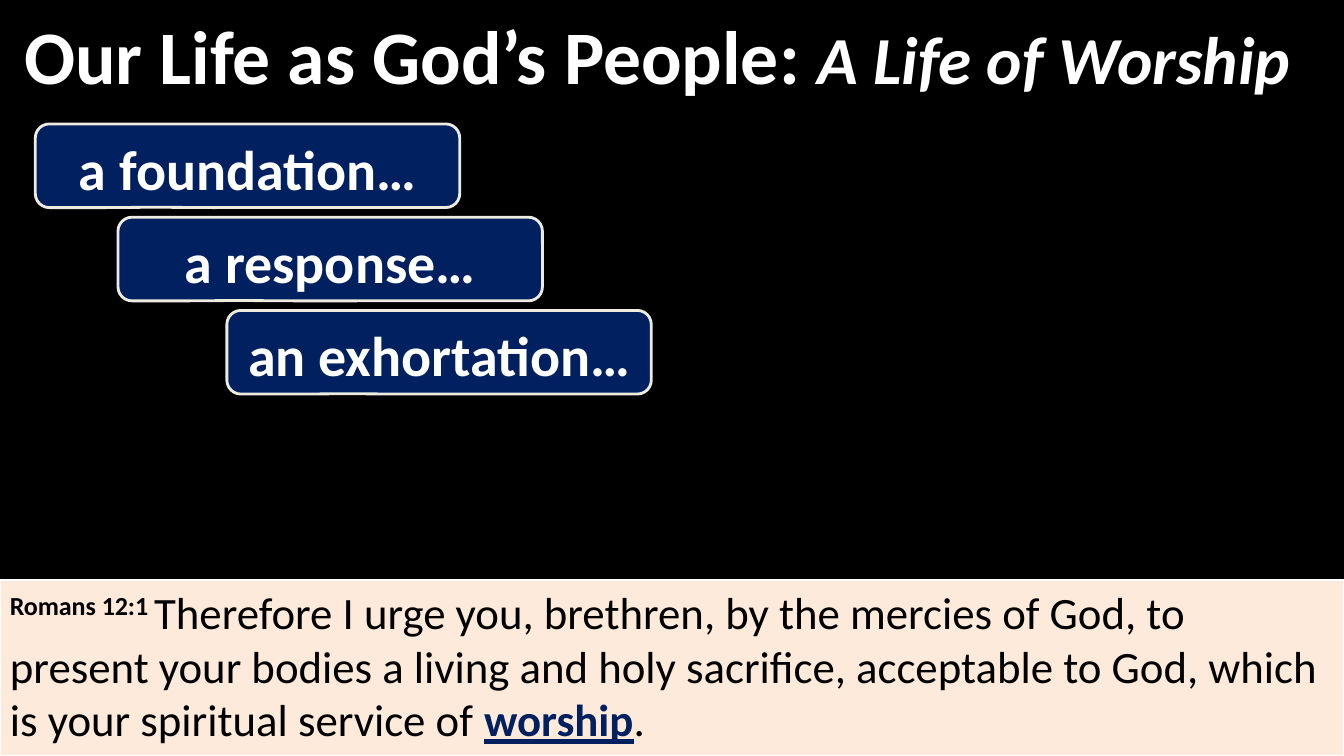
from lxml import etree
from pptx import Presentation
from pptx.dml.color import RGBColor
from pptx.enum.shapes import MSO_SHAPE as SHAPE
from pptx.enum.text import MSO_ANCHOR as ANCHOR, PP_ALIGN as ALIGN
from pptx.oxml.ns import qn
from pptx.util import Inches, Pt

BLACK = RGBColor(0x00, 0x00, 0x00)
WHITE = RGBColor(0xFF, 0xFF, 0xFF)
NAVY = RGBColor(0x00, 0x20, 0x60)
PEACH = RGBColor(0xFD, 0xEA, 0xDA)
CREAM = RGBColor(0xEE, 0xEC, 0xE1)

WIDTH, HEIGHT = 13.33, 7.5
TITLE_H, VERSE_H = 1.07, 1.75
STEP_W, STEP_H, STEP_PITCH = 4.21, 0.83, 0.925


def add_box(s, kind, box, fill, line=None, line_width=0, anchor=ANCHOR.TOP):
    sp = s.shapes.add_shape(kind, *[Inches(v) for v in box])
    sp.shadow.inherit = False
    sp.fill.solid()
    sp.fill.fore_color.rgb = fill
    if line is None:
        sp.line.fill.background()
    else:
        sp.line.color.rgb = line
        sp.line.width = Pt(line_width)
    tf = sp.text_frame
    tf.word_wrap = True
    tf.vertical_anchor = anchor
    tf.paragraphs[0].alignment = ALIGN.LEFT
    return sp


def add_run(p, text, size, color, bold=False, italic=False, underline=False,
            baseline=0):
    r = p.add_run()
    r.text = text
    f = r.font
    f.name, f.size, f.color.rgb = "Calibri", Pt(size), color
    f.bold, f.italic, f.underline = bold, italic, underline
    if baseline:
        r._r.get_or_add_rPr().set("baseline", str(baseline * 1000))


def set_opacity(sp, percent):
    color = sp.fill._xPr.find(qn("a:solidFill"))[0]
    etree.SubElement(color, qn("a:alpha")).set("val", str(percent * 1000))


def add_verse(s, box):
    sp = add_box(s, SHAPE.RECTANGLE, box, PEACH, WHITE, 1.5)
    sp.text_frame.margin_right = Inches(0.2)
    p = sp.text_frame.paragraphs[0]
    add_run(p, "Romans 12:1 ", 32, BLACK, bold=True, baseline=30)
    add_run(p, "Therefore I urge you, brethren, by the mercies of God, to "
               "present your bodies a living and holy sacrifice, acceptable "
               "to God, which is your spiritual service of ", 32, BLACK)
    add_run(p, "worship", 32, NAVY, bold=True, underline=True)
    add_run(p, ".", 32, BLACK)


def add_title(s, box):
    sp = add_box(s, SHAPE.RECTANGLE, box, BLACK, anchor=ANCHOR.MIDDLE)
    set_opacity(sp, 64)
    sp.text_frame.margin_left = Inches(0.24)
    sp.text_frame.margin_right = 0
    p = sp.text_frame.paragraphs[0]
    add_run(p, "Our Life as God’s People: ", 54, WHITE, bold=True)
    add_run(p, "A Life of Worship", 48, WHITE, bold=True, italic=True)


def add_step(s, box, text):
    sp = add_box(s, SHAPE.ROUNDED_RECTANGULAR_CALLOUT, box, NAVY, CREAM, 2,
                 anchor=ANCHOR.MIDDLE)
    for i, value in enumerate((-0.219, 0.496, 0.167)):
        sp.adjustments[i] = value
    p = sp.text_frame.paragraphs[0]
    p.alignment = ALIGN.CENTER
    p.line_spacing = 1.07
    add_run(p, text, 40, WHITE, bold=True)


def add_staircase(s, top, steps):
    """Stack the callouts at an even pitch, each at its own indent."""
    for row, (left, text) in enumerate(steps):
        add_step(s, (left, top + row * STEP_PITCH, STEP_W, STEP_H), text)


def main():
    prs = Presentation()
    prs.slide_width, prs.slide_height = Inches(WIDTH), Inches(HEIGHT)
    s = prs.slides.add_slide(prs.slide_layouts[6])
    s.background.fill.solid()
    s.background.fill.fore_color.rgb = BLACK
    add_verse(s, (0, HEIGHT - VERSE_H, WIDTH, VERSE_H))
    add_title(s, (0, 0, WIDTH, TITLE_H))
    add_staircase(s, 1.23, [(0.35, "a foundation…"),
                            (1.17, "a response…"),
                            (2.25, "an exhortation…")])
    prs.save("out.pptx")


if __name__ == "__main__":
    main()
